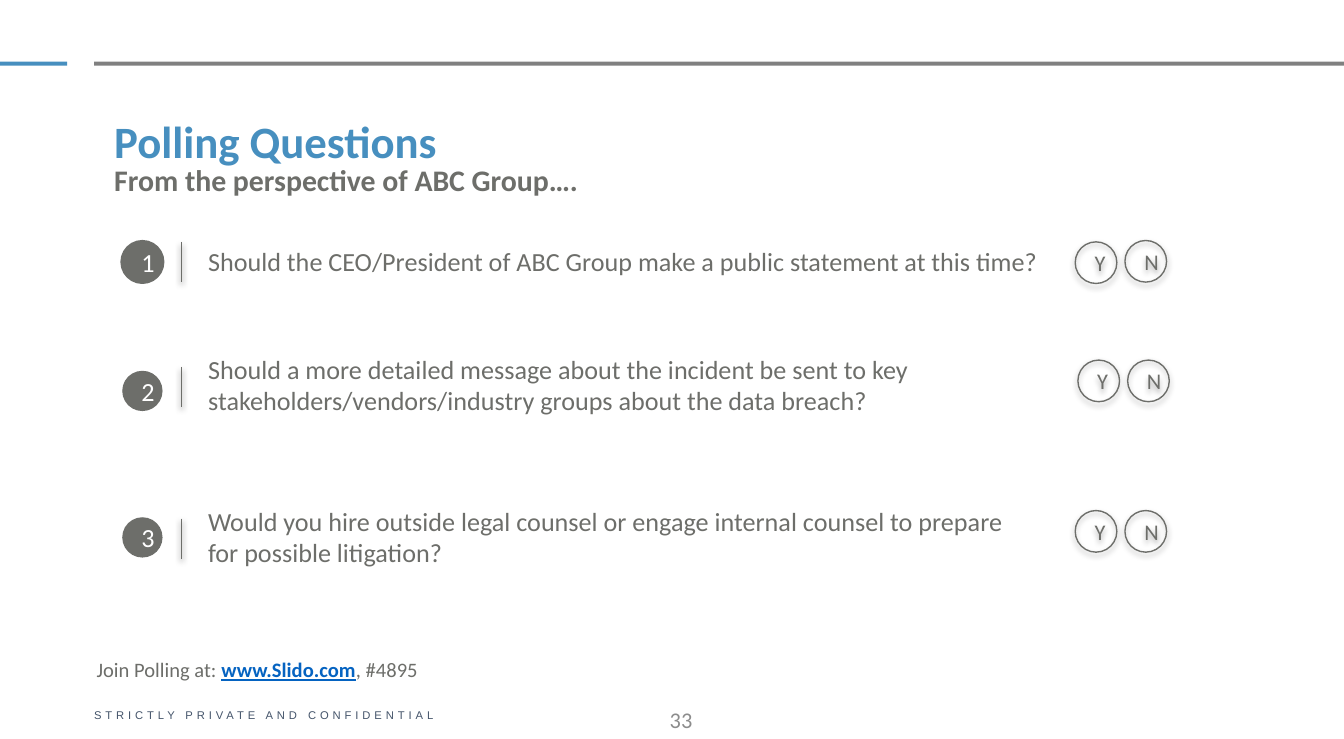
from dataclasses import dataclass

from lxml import etree
from pptx import Presentation
from pptx.dml.color import RGBColor
from pptx.enum.shapes import MSO_CONNECTOR, MSO_SHAPE
from pptx.enum.text import MSO_ANCHOR, PP_ALIGN
from pptx.oxml.ns import qn
from pptx.util import Inches, Pt

OVAL, RECT = MSO_SHAPE.OVAL, MSO_SHAPE.RECTANGLE
LINE = MSO_CONNECTOR.STRAIGHT
TOP, MID = MSO_ANCHOR.TOP, MSO_ANCHOR.MIDDLE
LEFT, MIDST, RIGHT = PP_ALIGN.LEFT, PP_ALIGN.CENTER, PP_ALIGN.RIGHT

# Grid: 100 columns by 55 rows
COLS, ROWS = 100, 55
CELL = Inches(0.1)
BLUE, GRAY, INK, PALE = "478FBF", "808080", "6D6E6A", "8C8C8C"
NAVY, LINK, WHITE = "44546A", "0563C1", "FFFFFF"


@dataclass
class Run:
    text: str
    size: float
    color: str = INK
    bold: bool = False
    under: bool = False
    font: str = "Calibri"


@dataclass
class Poll:
    text: str
    row: float    # top of the question
    wide: float   # columns of the question
    bar: float    # top of the divider
    dot: float    # top of the number
    vote: tuple   # column of Y, row of Y, row of N
    high: float = 5.7
    wrap: bool = True
    edge: float = 0


POLLS = [
    Poll("Should the CEO/President of ABC Group make a public statement at this time?",
         17.8, 64.3, 18, 18, (80, 18, 17.9), high=3.4, wrap=False, edge=2),
    Poll("Should a more detailed message about the incident be sent to key "
         "stakeholders/vendors/industry groups about the data breach?",
         25.8, 65.5, 27.3, 27.6, (80.2, 26.8, 26.8)),
    Poll("Would you hire outside legal counsel or engage internal counsel to prepare "
         "for possible litigation?",
         37.1, 63.6, 38.6, 38.5, (80, 38, 38)),
]


def grid(*cells: float) -> list:
    return [round(n * CELL) for n in cells]


def rgb(code: str) -> RGBColor:
    return RGBColor.from_string(code)


def shade(shape, alpha: int = 0, dist: float = 0) -> None:
    """Give the shape a soft shadow below it, or none at all."""
    glow = etree.SubElement(shape._element.spPr, qn("a:effectLst"))
    if alpha:
        cast = etree.SubElement(glow, qn("a:outerShdw"), blurRad=str(Pt(3.1)),
                                dist=str(Pt(dist)), dir="5400000", rotWithShape="0")
        tint = etree.SubElement(cast, qn("a:srgbClr"), val="000000")
        etree.SubElement(tint, qn("a:alpha"), val=str(alpha * 1000))


def write(shape, runs: list, align=LEFT, anchor=TOP, wrap: bool = True):
    frame = shape.text_frame
    frame.word_wrap, frame.vertical_anchor = wrap, anchor
    para = frame.paragraphs[0]
    para.alignment, para.space_before = align, Pt(0)
    for item in runs:
        run = para.add_run()
        run.text = item.text
        font = run.font
        font.name, font.size, font.bold = item.font, Pt(item.size), item.bold
        font.underline = item.under
        font.color.rgb = rgb(item.color)
    return para


def place(shape, *cells: float):
    shape.left, shape.top, shape.width, shape.height = grid(*cells)
    return shape


def label(slide, cells: tuple, runs: list, **style):
    box = slide.shapes.add_textbox(*grid(*cells))
    return box, write(box, runs, **style)


def form(slide, kind, cells: tuple, fill: str = "", line: str = "", width: float = 0.75):
    shape = slide.shapes.add_shape(kind, *grid(*cells))
    if fill:
        shape.fill.solid()
        shape.fill.fore_color.rgb = rgb(fill)
    else:
        shape.fill.background()
    if line:
        shape.line.color.rgb = rgb(line)
        shape.line.width = Pt(width)
    else:
        shape.line.fill.background()
    return shape


def ask(slide, num: int, poll: Poll) -> None:
    # Yes and no circles
    col, *tops = poll.vote
    for i, (word, top) in enumerate(zip("YN", tops)):
        ring = form(slide, OVAL, (col + 3.7 * i, top, 3.1, 3.1), line=INK)
        shade(ring, 35, 1.8)
        write(ring, [Run(word, 12)], MIDST, MID)
    # Question
    _, para = label(slide, (14.5, poll.row, poll.wide, poll.high),
                    [Run(poll.text, 14)], wrap=poll.wrap)
    para.space_after = Pt(3)
    # Divider
    bar = slide.shapes.add_connector(LINE, *grid(13.5, poll.bar, 13.5, poll.bar + 3))
    bar.line.color.rgb = rgb(INK)
    bar.line.width = Pt(1)
    shade(bar, 38, 1.6)
    # Number
    dot = form(slide, OVAL, (9.1, poll.dot, 3, 3), INK, INK if poll.edge else "", poll.edge)
    shade(dot)
    write(dot, [Run(str(num), 14, WHITE)], MIDST, MID)


def main() -> None:
    deck = Presentation()
    deck.slide_width, deck.slide_height = grid(COLS, ROWS)
    slide = deck.slides.add_slide(deck.slide_layouts[1])

    # Top rules
    for col, wide, color in ((0, 5, BLUE), (7, 93, GRAY)):
        shade(form(slide, RECT, (col, 4.6, wide, 0.3), color))

    # Title and subtitle
    title, body = slide.placeholders
    head = write(place(title, 7.5, 7.6, 84.7, 4), [Run("Polling Questions", 24, BLUE, True)])
    head.line_spacing = 1.1
    lead = write(place(body, 7.5, 11.5, 48.9, 3.7),
                 [Run("From the perspective of ABC Group….", 16, bold=True)])
    props = lead._p.get_or_add_pPr()
    props.set("marL", "0")
    props.set("indent", "0")
    etree.SubElement(props, qn("a:buNone"))

    # Questions
    for num, poll in enumerate(POLLS, 1):
        ask(slide, num, poll)

    # How to join
    join = form(slide, RECT, (6.2, 48.4, 32.8, 2.9), line=WHITE)
    shade(join)
    write(join, [Run("Join Polling at: ", 11),
                 Run("www.Slido.com", 11, LINK, True, True),
                 Run(", #4895", 11)])

    # Footer and page number
    foot, para = label(slide, (7, 52.2, 30.6, 2),
                       [Run("STRICTLY PRIVATE AND CONFIDENTIAL", 6, NAVY, font="Arial")],
                       anchor=MID, wrap=False)
    frame = foot.text_frame
    frame.margin_left = frame.margin_right = frame.margin_top = frame.margin_bottom = 0
    para.line_spacing = 1.1
    para.runs[0].font._element.set("spc", "210")
    label(slide, (30, 52.1, 22.5, 2.9), [Run("33", 12, PALE)], align=RIGHT, anchor=MID)

    deck.save("out.pptx")


if __name__ == "__main__":
    main()
